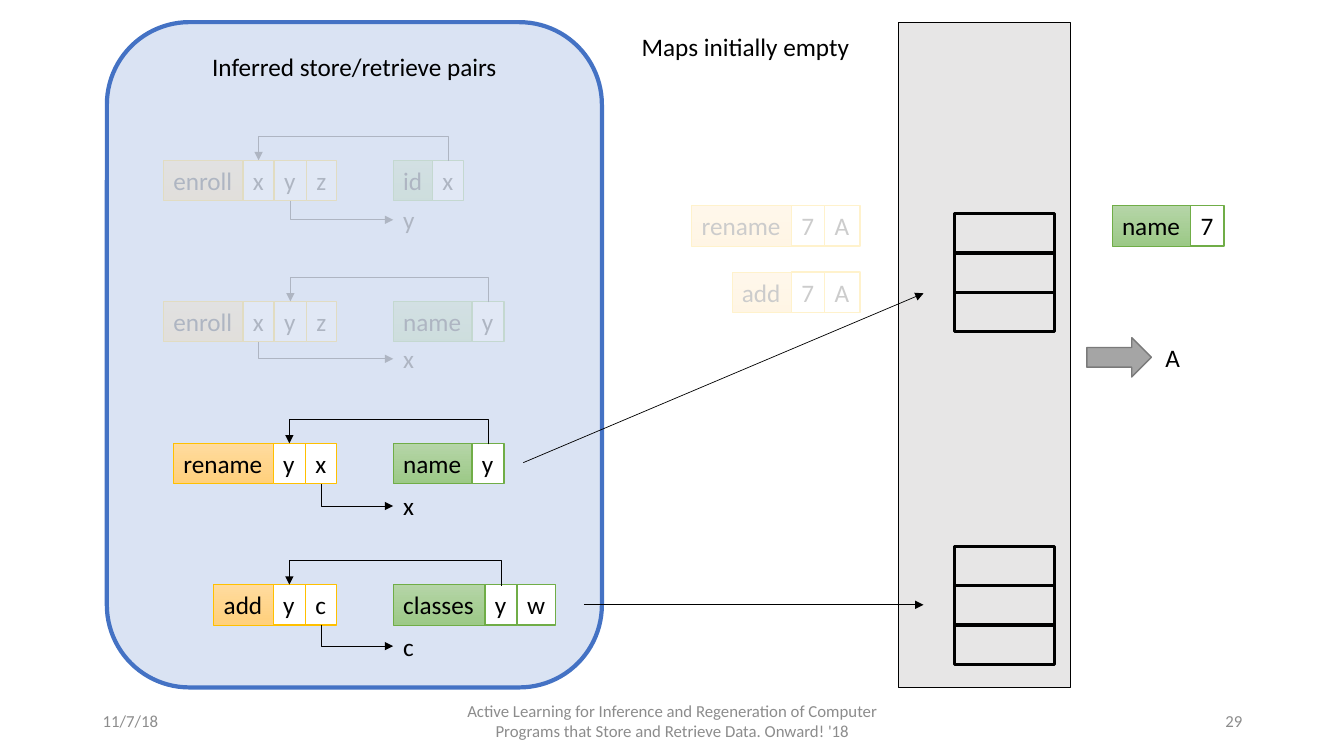
from lxml import etree
from pptx import Presentation
from pptx.dml.color import RGBColor
from pptx.enum.shapes import MSO_CONNECTOR as CONN, MSO_SHAPE as SHAPE
from pptx.enum.text import MSO_ANCHOR as ANCHOR, MSO_AUTO_SIZE as AUTO, PP_ALIGN as ALIGN
from pptx.oxml.ns import qn
from pptx.util import Inches, Pt

BLACK = RGBColor(0x00, 0x00, 0x00)
WHITE = RGBColor(0xFF, 0xFF, 0xFF)
FOOTER_GRAY = RGBColor(0x8C, 0x8C, 0x8C)
STORE_GRAY = RGBColor(0xE7, 0xE6, 0xE6)
ARROW_FILL = RGBColor(0xA5, 0xA5, 0xA5)
ARROW_LINE = RGBColor(0x7A, 0x7A, 0x7A)
PANEL_FILL = RGBColor(0xDA, 0xE3, 0xF3)
PANEL_LINE = RGBColor(0x44, 0x72, 0xC4)
GOLD = (RGBColor(0xFF, 0xC0, 0x00), RGBColor(0xFF, 0xDB, 0x9E), RGBColor(0xFF, 0xD0, 0x7C))
GREEN = (RGBColor(0x70, 0xAD, 0x47), RGBColor(0xB5, 0xD5, 0xA7), RGBColor(0x9C, 0xC9, 0x87))

BOX_H = 0.4
RETRIEVE_X = 3.9
LOOP_RISE = 0.25
LOOP_STEP = 0.01
WIDTHS = {"enroll": 0.79, "rename": 0.99, "add": 0.59, "id": 0.39, "name": 0.78,
          "classes": 0.91, "x": 0.31, "y": 0.32, "z": 0.3, "c": 0.31, "w": 0.38,
          "7": 0.33, "A": 0.35}


def write(sp, text, size=18, color=BLACK, align=ALIGN.LEFT, anchor=ANCHOR.TOP, wrap=False):
    tf = sp.text_frame
    tf.word_wrap = wrap
    tf.auto_size = AUTO.NONE if wrap else AUTO.SHAPE_TO_FIT_TEXT
    tf.vertical_anchor = anchor
    p = tf.paragraphs[0]
    p.alignment = align
    r = p.add_run()
    r.text = text
    r.font.name = "Calibri"
    r.font.size = Pt(size)
    r.font.color.rgb = color


def add_label(slide, text, x, y, w, h=BOX_H, **fmt):
    write(slide.shapes.add_textbox(Inches(x), Inches(y), Inches(w), Inches(h)), text, **fmt)


def add_box(slide, x, y, w, h, fill=None, line=None, weight=1, kind=SHAPE.RECTANGLE):
    sp = slide.shapes.add_shape(kind, Inches(x), Inches(y), Inches(w), Inches(h))
    sp.shadow.inherit = False
    if fill is None:
        sp.fill.background()
    else:
        sp.fill.solid()
        sp.fill.fore_color.rgb = fill
    if line is None:
        sp.line.fill.background()
    else:
        sp.line.color.rgb = line
        sp.line.width = Pt(weight)
    return sp


def add_veil(slide, x, y, w, h, color):
    sp = add_box(slide, x, y, w, h, color)
    clr = sp.element.spPr.find(qn("a:solidFill")).find(qn("a:srgbClr"))
    etree.SubElement(clr, qn("a:alpha"), val="80000")


def add_call(slide, x, y, name, args, palette):
    line, top, bottom = palette
    head = add_box(slide, x, y, WIDTHS[name], BOX_H, WHITE, line, 0.5)
    head.fill.gradient()
    head.fill.gradient_angle = 270
    for stop, color in zip(head.fill.gradient_stops, (top, bottom)):
        stop.color.rgb = color
    write(head, name)
    x += WIDTHS[name]
    centers = []
    for arg in args:
        write(add_box(slide, x, y, WIDTHS[arg], BOX_H, WHITE, line), arg)
        centers.append(x + WIDTHS[arg] / 2)
        x += WIDTHS[arg]
    return centers


def add_arrow(slide, x1, y1, x2, y2, kind=CONN.STRAIGHT):
    cxn = slide.shapes.add_connector(kind, Inches(x1), Inches(y1), Inches(x2), Inches(y2))
    cxn.line.color.rgb = BLACK
    cxn.line.width = Pt(0.5)
    sp_pr = cxn.element.spPr
    etree.SubElement(sp_pr.find(qn("a:ln")), qn("a:tailEnd"), type="triangle")
    etree.SubElement(sp_pr, qn("a:effectLst"))
    return cxn


def add_elbow(slide, x1, y1, x2, y2, preset, flip, adj=None):
    cxn = add_arrow(slide, x1, y1, x2, y2, CONN.ELBOW)
    run, rise = abs(x2 - x1), abs(y2 - y1)
    cxn.left = Inches((x1 + x2 - rise) / 2)
    cxn.top = Inches((y1 + y2 - run) / 2)
    cxn.width, cxn.height = Inches(rise), Inches(run)
    xfrm = cxn.element.spPr.find(qn("a:xfrm"))
    for name in ("flipH", "flipV"):
        xfrm.attrib.pop(name, None)
    xfrm.set("rot", "16200000")
    xfrm.set(flip, "1")
    geom = cxn.element.spPr.find(qn("a:prstGeom"))
    geom.set("prst", preset)
    if adj is not None:
        guides = geom.find(qn("a:avLst"))
        etree.SubElement(guides, qn("a:gd"), name="adj1", fmla=f"val {round(adj * 100000)}")


def add_pair(slide, y, store, retrieve, key, result, result_y):
    x, name, args = store
    stored = dict(zip(args, add_call(slide, x, y, name, args, GOLD)))
    name, args = retrieve
    asked = dict(zip(args, add_call(slide, RETRIEVE_X, y, name, args, GREEN)))
    add_label(slide, result, RETRIEVE_X, result_y, WIDTHS[result])
    add_elbow(slide, asked[key], y + LOOP_STEP, stored[key], y,
              "bentConnector3", "flipV", LOOP_RISE / LOOP_STEP)
    add_elbow(slide, stored[result], y + BOX_H, RETRIEVE_X, result_y + BOX_H / 2,
              "bentConnector2", "flipH")


def add_map(slide, y):
    for i in range(3):
        add_box(slide, 9.47, y + i * 0.39, 0.99, 0.39, line=BLACK, weight=2.25)


def add_footer(slide):
    for text, x, w, align in (
            ("11/7/18", 0.92, 3, ALIGN.LEFT),
            ("Active Learning for Inference and Regeneration of Computer Programs "
             "that Store and Retrieve Data. Onward! '18", 4.42, 4.5, ALIGN.CENTER),
            ("29", 9.42, 3, ALIGN.RIGHT)):
        add_label(slide, text, x, 6.95, w, size=12, color=FOOTER_GRAY, align=align,
                  anchor=ANCHOR.MIDDLE, wrap=True)


def main():
    prs = Presentation()
    prs.slide_width, prs.slide_height = Inches(13.33), Inches(7.5)
    slide = prs.slides.add_slide(prs.slide_layouts[6])

    add_box(slide, 8.91, 0.22, 1.71, 6.6, STORE_GRAY, BLACK, 0.5)
    add_map(slide, 2.12)
    add_map(slide, 5.42)
    add_footer(slide)

    panel = add_box(slide, 1.06, 0.22, 4.91, 6.6, PANEL_FILL, PANEL_LINE, 3,
                    SHAPE.ROUNDED_RECTANGLE)
    write(panel, "Inferred store/retrieve pairs", align=ALIGN.CENTER, wrap=True)
    for pair in (
            (1.59, (1.62, "enroll", "xyz"), ("id", "x"), "x", "y", 1.98),
            (2.99, (1.62, "enroll", "xyz"), ("name", "y"), "y", "x", 3.36),
            (4.4, (1.72, "rename", "yx"), ("name", "y"), "y", "x", 4.82),
            (5.8, (2.12, "add", "yc"), ("classes", "yw"), "y", "c", 6.21)):
        add_pair(slide, *pair)
    add_veil(slide, 1.3, 1.23, 4.43, 2.66, PANEL_FILL)

    add_label(slide, "Maps initially empty", 6.24, 0.26, 2.28, align=ALIGN.RIGHT)
    add_call(slide, 7.26, 2.7, "add", "7A", GOLD)
    add_call(slide, 6.86, 2.04, "rename", "7A", GOLD)
    add_veil(slide, 6.19, 1.79, 2.42, 0.76, WHITE)
    add_veil(slide, 6.36, 2.63, 2.32, 0.67, WHITE)

    add_call(slide, 11.03, 2.04, "name", "7", GREEN)
    add_box(slide, 10.78, 3.35, 0.64, 0.39, ARROW_FILL, ARROW_LINE, 1, SHAPE.RIGHT_ARROW)
    add_label(slide, "A", 11.46, 3.35, WIDTHS["A"])
    add_arrow(slide, 5.79, 6, 9.16, 6)
    add_arrow(slide, 5.19, 4.59, 9.16, 2.91)

    prs.save("out.pptx")


if __name__ == "__main__":
    main()
